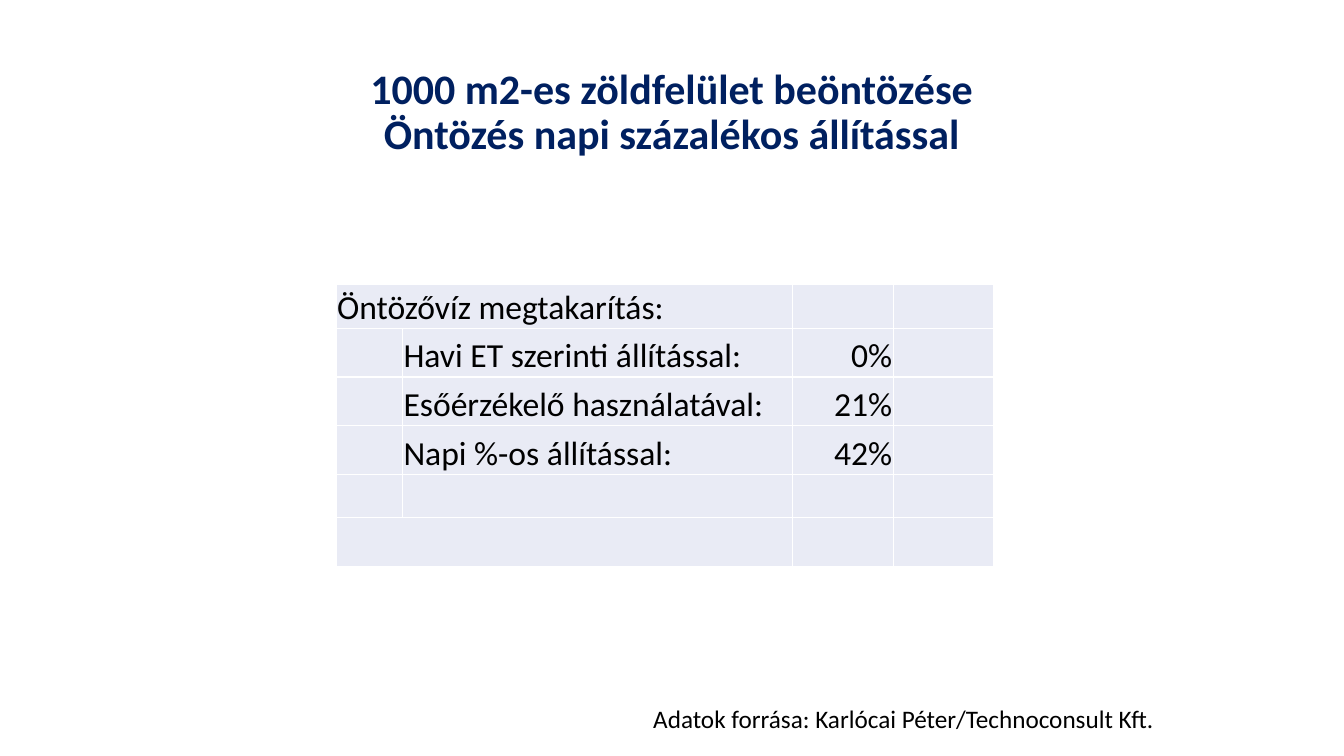
"""Build the slide on irrigation water savings."""
import pptx
import pptx.dml.color
import pptx.enum.text
import pptx.oxml
import pptx.oxml.ns
import pptx.util

Pt = pptx.util.Pt
RGBColor = pptx.dml.color.RGBColor
ALIGN = pptx.enum.text.PP_ALIGN
ANCHOR = pptx.enum.text.MSO_ANCHOR

NAVY = RGBColor(0x00, 0x20, 0x60)
BLACK = RGBColor(0x00, 0x00, 0x00)
WHITE = RGBColor(0xFF, 0xFF, 0xFF)
PALE_BLUE = RGBColor(0xE9, 0xEB, 0xF5)

FONT = "Calibri"
TITLE = "1000 m2-es zöldfelület beöntözése\nÖntözés napi százalékos állítással"
SOURCE = "Adatok forrása: Karlócai Péter/Technoconsult Kft."
COLUMN_WIDTHS = [47.5, 278.5, 72, 72]
ROW_HEIGHTS = [31, 34.8, 34.8, 34.8, 31, 34.8]
SAVINGS = [
    ["Öntözővíz megtakarítás:", "", "", ""],
    ["", "Havi ET szerinti állítással:", "0%", ""],
    ["", "Esőérzékelő használatával:", "21%", ""],
    ["", "Napi %-os állítással:", "42%", ""],
    ["", "", "", ""],
    ["", "", "", ""],
]
MERGED_ROWS = [0, 5]
VALUE_COLUMN = 2


def write_text(para, text, size, color, bold=False, align=ALIGN.LEFT):
    para.text = text
    para.alignment = align
    for span in para.runs:
        span.font.name = FONT
        span.font.size = Pt(size)
        span.font.bold = bold
        span.font.color.rgb = color


def add_title(page):
    title = page.shapes.title
    title.left, title.top, title.width, title.height = Pt(66), Pt(28.8), Pt(828), Pt(104.4)
    title.text_frame.vertical_anchor = ANCHOR.MIDDLE
    para = title.text_frame.paragraphs[0]
    para.line_spacing = 0.9
    write_text(para, TITLE, 30, NAVY, True, ALIGN.CENTER)


def add_borders(cell):
    properties = cell._tc.get_or_add_tcPr()
    for position, side in enumerate(["lnL", "lnR", "lnT", "lnB"]):
        line = pptx.oxml.parse_xml(
            f'<a:{side} {pptx.oxml.ns.nsdecls("a")} w="{Pt(1)}">'
            f'<a:solidFill><a:srgbClr val="{WHITE}"/></a:solidFill></a:{side}>'
        )
        properties.insert(position, line)


def format_cell(cell, text, align):
    cell.fill.solid()
    cell.fill.fore_color.rgb = PALE_BLUE
    add_borders(cell)
    if text:
        cell.vertical_anchor = ANCHOR.BOTTOM
        cell.margin_left = cell.margin_right = cell.margin_top = Pt(0.75)
        cell.margin_bottom = Pt(0)
        write_text(cell.text_frame.paragraphs[0], text, 24, BLACK, align=align)


def add_savings_table(page):
    frame = page.shapes.add_table(
        len(ROW_HEIGHTS), len(COLUMN_WIDTHS), Pt(240), Pt(203.5),
        Pt(sum(COLUMN_WIDTHS)), Pt(sum(ROW_HEIGHTS)),
    )
    table = frame.table
    table.first_row = False
    table.horz_banding = False
    for column, width in zip(table.columns, COLUMN_WIDTHS):
        column.width = Pt(width)
    for row, height in zip(table.rows, ROW_HEIGHTS):
        row.height = Pt(height)
    for row_index, texts in enumerate(SAVINGS):
        for column_index, text in enumerate(texts):
            align = ALIGN.RIGHT if column_index == VALUE_COLUMN else ALIGN.LEFT
            format_cell(table.cell(row_index, column_index), text, align)
    for row_index in MERGED_ROWS:
        table.cell(row_index, 0).merge(table.cell(row_index, 1))


def add_source(page):
    box = page.shapes.add_textbox(Pt(459.5), Pt(499), Pt(402.5), Pt(29))
    box.text_frame.word_wrap = True
    write_text(box.text_frame.paragraphs[0], SOURCE, 18, BLACK)


def main():
    deck = pptx.Presentation()
    deck.slide_width, deck.slide_height = Pt(960), Pt(540)
    page = deck.slides.add_slide(deck.slide_layouts[5])
    add_title(page)
    add_savings_table(page)
    add_source(page)
    deck.save("out.pptx")


if __name__ == "__main__":
    main()
